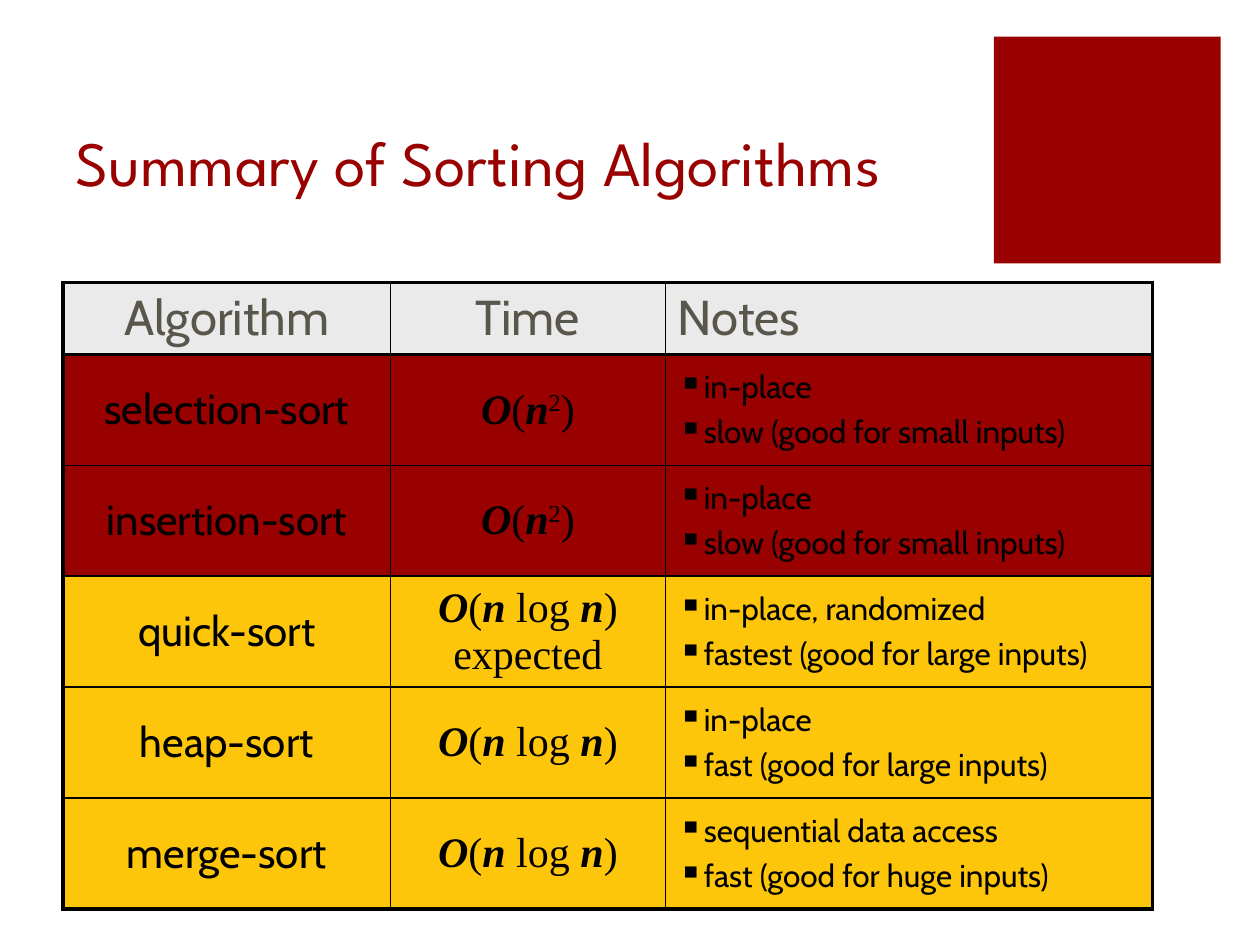
from dataclasses import dataclass

from lxml.etree import SubElement
from pptx import Presentation
from pptx.dml.color import RGBColor
from pptx.enum.shapes import MSO_SHAPE
from pptx.enum.text import MSO_ANCHOR, MSO_AUTO_SIZE, PP_ALIGN
from pptx.oxml.ns import qn
from pptx.util import Pt


@dataclass(frozen=True)
class Theme:
    red: str = "990000"
    gold: str = "FEC60B"
    grey: str = "EAEAEA"
    olive: str = "59564B"
    black: str = "000000"
    title_font: str = "League Spartan"
    body_font: str = "Cabin"
    math_font: str = "Times New Roman"
    title_size: float = 36
    header_size: float = 28
    body_size: float = 24
    note_size: float = 18
    thick: float = 2.25
    thin: float = 1


THEME = Theme()
COLUMNS = (187.2, 157, 278.4)
HEADER_HEIGHT = 41
ROW_HEIGHT = 63.4
NOTE_INDENT = 10.3
HEADERS = ("Algorithm", "Time", "Notes")
SQUARE = (("O", True), ("(", False), ("n", True), ("2", "sup"), (")", False))
LOG = (("O", True), ("(", False), ("n", True), (" log ", False),
       ("n", True), (")", False))
EXPECTED = LOG + (("\n", False), ("expected", False))
SLOW = ("in-place", "slow (good for small inputs)")
ALGORITHMS = (
    ("selection-sort", SQUARE, SLOW, THEME.red),
    ("insertion-sort", SQUARE, SLOW, THEME.red),
    ("quick-sort", EXPECTED,
     ("in-place, randomized", "fastest (good for large inputs)"), THEME.gold),
    ("heap-sort", LOG, ("in-place", "fast (good for large inputs)"), THEME.gold),
    ("merge-sort", LOG,
     ("sequential data access", "fast (good for huge inputs)"), THEME.gold),
)


def add_run(p, text, font, size, color):
    r = p.add_run()
    r.text = text
    r.font.name = font
    r.font.size = Pt(size)
    r.font.color.rgb = RGBColor.from_string(color)
    return r


def format_paragraph(p, align, bullet=False):
    p.alignment = align
    pPr = p._p.get_or_add_pPr()
    before = SubElement(pPr, qn("a:spcBef"))
    SubElement(before, qn("a:spcPct"), val="20000")
    if bullet:
        pPr.set("marL", str(Pt(NOTE_INDENT)))
        pPr.set("indent", str(-Pt(NOTE_INDENT)))
        color = SubElement(pPr, qn("a:buClr"))
        SubElement(color, qn("a:srgbClr"), val=THEME.black)
        SubElement(pPr, qn("a:buSzPct"), val="110000")
        SubElement(pPr, qn("a:buChar"), char="▪")


def write_label(cell, text, size, color, align=PP_ALIGN.CENTER):
    p = cell.text_frame.paragraphs[0]
    format_paragraph(p, align)
    add_run(p, text, THEME.body_font, size, color)


def write_time(cell, parts):
    p = cell.text_frame.paragraphs[0]
    format_paragraph(p, PP_ALIGN.CENTER)
    for text, style in parts:
        if text == "\n":
            p.add_line_break()
            continue
        r = add_run(p, text, THEME.math_font, THEME.body_size, THEME.black)
        r.font.bold = r.font.italic = style is True
        if style == "sup":
            r._r.get_or_add_rPr().set("baseline", "30000")


def write_notes(cell, notes):
    tf = cell.text_frame
    for i, note in enumerate(notes):
        p = tf.add_paragraph() if i else tf.paragraphs[0]
        format_paragraph(p, PP_ALIGN.LEFT, bullet=True)
        add_run(p, note, THEME.body_font, THEME.note_size, THEME.black)


def format_cell(cell, row, col, last_row, last_col, fill):
    edges = {
        "a:lnL": col == 0,
        "a:lnR": col == last_col,
        "a:lnT": row in (0, 1),
        "a:lnB": row in (0, last_row),
    }
    tcPr = cell._tc.get_or_add_tcPr()
    for tag, heavy in edges.items():
        width = THEME.thick if heavy else THEME.thin
        ln = SubElement(tcPr, qn(tag), w=str(Pt(width)))
        solid = SubElement(ln, qn("a:solidFill"))
        SubElement(solid, qn("a:srgbClr"), val=THEME.black)
    cell.fill.solid()
    cell.fill.fore_color.rgb = RGBColor.from_string(fill)
    cell.vertical_anchor = MSO_ANCHOR.MIDDLE


def add_corner_block(s, left, top, size):
    sp = s.shapes.add_shape(
        MSO_SHAPE.RECTANGLE, Pt(left), Pt(top), Pt(size), Pt(size))
    sp.shadow.inherit = False
    sp.fill.solid()
    sp.fill.fore_color.rgb = RGBColor.from_string(THEME.red)
    sp.line.fill.background()


def add_title(s, left, top, width, height):
    sp = s.shapes.title
    sp.left, sp.top, sp.width, sp.height = map(Pt, (left, top, width, height))
    tf = sp.text_frame
    tf.word_wrap = True
    tf.auto_size = MSO_AUTO_SIZE.NONE
    tf.vertical_anchor = MSO_ANCHOR.BOTTOM
    p = tf.paragraphs[0]
    p.alignment = PP_ALIGN.LEFT
    add_run(p, "Summary of Sorting Algorithms",
            THEME.title_font, THEME.title_size, THEME.red)


def add_summary_table(s, left, top):
    heights = [HEADER_HEIGHT] + [ROW_HEIGHT] * len(ALGORITHMS)
    table = s.shapes.add_table(
        len(heights), len(COLUMNS), Pt(left), Pt(top),
        Pt(sum(COLUMNS)), Pt(sum(heights))).table
    table.first_row = table.horz_banding = False
    for column, width in zip(table.columns, COLUMNS):
        column.width = Pt(width)
    for row, height in zip(table.rows, heights):
        row.height = Pt(height)

    fills = [THEME.grey] + [fill for *_, fill in ALGORITHMS]
    for i, fill in enumerate(fills):
        for j in range(len(COLUMNS)):
            format_cell(table.cell(i, j), i, j,
                        len(heights) - 1, len(COLUMNS) - 1, fill)

    for j, header in enumerate(HEADERS):
        align = PP_ALIGN.LEFT if header == "Notes" else PP_ALIGN.CENTER
        write_label(table.cell(0, j), header,
                    THEME.header_size, THEME.olive, align)
    for i, (name, time, notes, _) in enumerate(ALGORITHMS, 1):
        write_label(table.cell(i, 0), name, THEME.body_size, THEME.black)
        write_time(table.cell(i, 1), time)
        write_notes(table.cell(i, 2), notes)


def main():
    prs = Presentation()
    prs.slide_width, prs.slide_height = Pt(720), Pt(540)
    s = prs.slides.add_slide(prs.slide_layouts[5])
    add_corner_block(s, 568, 21, 129.6)
    add_title(s, 36, 27.4, 512.6, 90)
    add_summary_table(s, 36, 161.3)
    prs.save("out.pptx")


if __name__ == "__main__":
    main()
